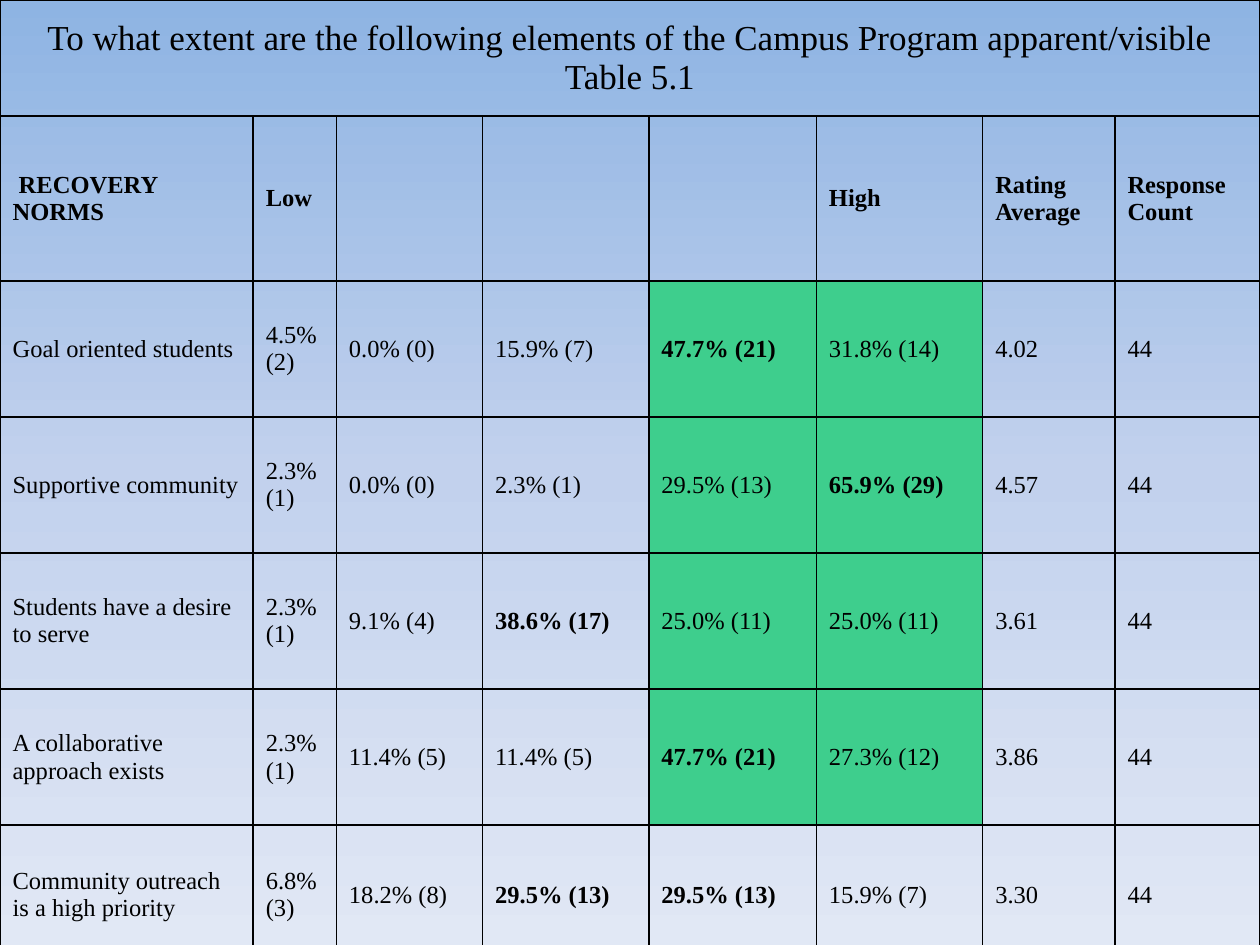
from copy import deepcopy

from lxml import etree
from pptx import Presentation
from pptx.dml.color import RGBColor
from pptx.enum.text import MSO_ANCHOR, PP_ALIGN
from pptx.oxml.ns import qn
from pptx.util import Inches, Pt

FONT = "Times New Roman"
COLORS = {
    "text": "000000",
    "border": "000000",
    "highlight": "3ECE8D",
    "top": "8EB4E3",
    "middle": "C2D1ED",
    "bottom": "E1E8F5",
}
TITLE = "To what extent are the following elements of the Campus Program apparent/visible Table 5.1"
HEADER = [" RECOVERY NORMS", "Low", "", "", "", "High", "Rating\nAverage", "Response\nCount"]
NORMS = [
    ["Goal oriented students", "4.5% (2)", "0.0% (0)", "15.9% (7)", "47.7% (21)", "31.8% (14)", "4.02", "44"],
    ["Supportive community", "2.3% (1)", "0.0% (0)", "2.3% (1)", "29.5% (13)", "65.9% (29)", "4.57", "44"],
    ["Students have a desire to serve", "2.3% (1)", "9.1% (4)", "38.6% (17)", "25.0% (11)", "25.0% (11)", "3.61", "44"],
    ["A collaborative approach exists", "2.3% (1)", "11.4% (5)", "11.4% (5)", "47.7% (21)", "27.3% (12)", "3.86", "44"],
    ["Community outreach is a high priority", "6.8% (3)", "18.2% (8)", "29.5% (13)", "29.5% (13)", "15.9% (7)", "3.30", "44"],
]
COL_WIDTHS = [2.01, 0.66, 1.16, 1.32, 1.33, 1.32, 1.05, 1.15]
ROW_HEIGHTS = [0.92, 1.31, 1.08, 1.08, 1.08, 1.08, 1.11]
HIGHLIGHT_ROWS = range(2, 6)
HIGHLIGHT_COLS = (4, 5)


def rgb(name):
    return RGBColor.from_string(COLORS[name])


def share(text):
    return float(text.split("%")[0])


def paint_background(s):
    fill = s.background.fill
    fill.gradient()
    fill.gradient_angle = 270
    first, last = fill.gradient_stops
    first.position, last.position = 0, 1
    first.color.rgb = rgb("top")
    last.color.rgb = rgb("bottom")
    stops = s._element.find(".//" + qn("a:gsLst"))
    middle = deepcopy(stops[0])
    middle.set("pos", "50000")
    middle.find(qn("a:srgbClr")).set("val", COLORS["middle"])
    stops.insert(1, middle)


def add_borders(cell):
    tc_pr = cell._tc.get_or_add_tcPr()
    for side in ("lnL", "lnR", "lnT", "lnB"):
        ln = etree.SubElement(tc_pr, qn("a:" + side), w=str(Pt(1)))
        solid = etree.SubElement(ln, qn("a:solidFill"))
        etree.SubElement(solid, qn("a:srgbClr"), val=COLORS["border"])


def style_cell(cell, text, size, bold, align, highlight):
    add_borders(cell)
    if highlight:
        cell.fill.solid()
        cell.fill.fore_color.rgb = rgb("highlight")
    else:
        cell.fill.background()
    cell.vertical_anchor = MSO_ANCHOR.MIDDLE
    p = cell.text_frame.paragraphs[0]
    p.text = text
    p.alignment = align
    p.font.name = FONT
    p.font.size = Pt(size)
    p.font.bold = bold
    p.font.color.rgb = rgb("text")


def main():
    prs = Presentation()
    prs.slide_width, prs.slide_height = Inches(10), Inches(7.5)
    s = prs.slides.add_slide(prs.slide_layouts[6])
    paint_background(s)

    rows = [[TITLE] + [""] * (len(HEADER) - 1), HEADER] + NORMS
    table = s.shapes.add_table(
        len(rows), len(HEADER), 0, 0, Inches(sum(COL_WIDTHS)), Inches(sum(ROW_HEIGHTS))
    ).table
    table.first_row = table.horz_banding = False
    for column, width in zip(table.columns, COL_WIDTHS):
        column.width = Inches(width)
    for row, height in zip(table.rows, ROW_HEIGHTS):
        row.height = Inches(height)
    table.cell(0, 0).merge(table.cell(0, len(HEADER) - 1))

    for i, row in enumerate(rows):
        top_share = max(map(share, row[1:6])) if i > 1 else None
        for j, text in enumerate(row):
            bold = i == 1 or (i > 1 and 1 <= j <= 5 and share(text) == top_share)
            style_cell(
                table.cell(i, j),
                text,
                size=14 if i else 20,
                bold=bold,
                align=PP_ALIGN.LEFT if i else PP_ALIGN.CENTER,
                highlight=i in HIGHLIGHT_ROWS and j in HIGHLIGHT_COLS,
            )

    prs.save("out.pptx")


if __name__ == "__main__":
    main()
